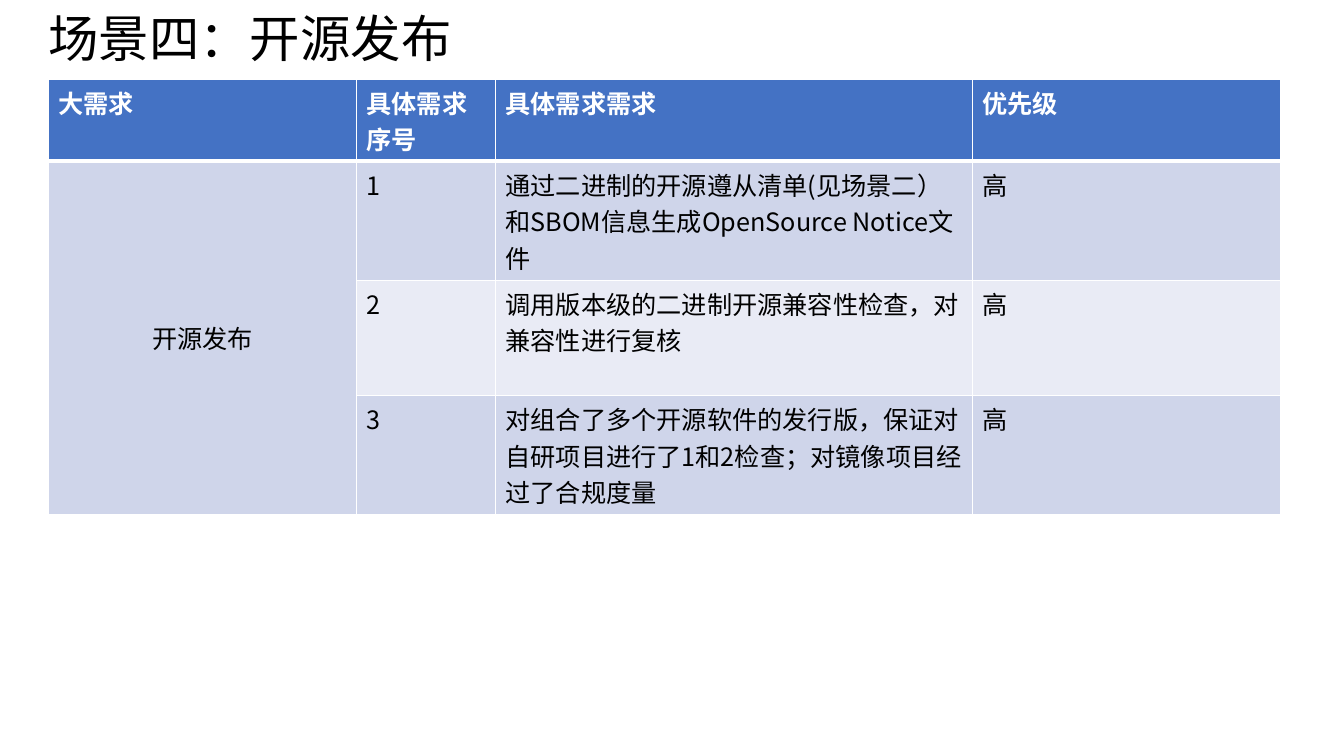
"""Builds a slide with a title and a table of open source release needs."""
from lxml import etree
from pptx import Presentation
from pptx import util as u
from pptx.dml.color import RGBColor
from pptx.enum import text as t
from pptx.oxml.ns import qn

FONT = "Noto Sans CJK SC"
BLACK = RGBColor(0, 0, 0)
WHITE = RGBColor(255, 255, 255)
BLUE = RGBColor(0x44, 0x72, 0xC4)
DARK = RGBColor(0xCF, 0xD5, 0xEA)
LIGHT = RGBColor(0xE9, 0xEB, 0xF5)

HEAD = ["大需求", "具体需求序号", "具体需求需求", "优先级"]
GROUP = "开源发布"
NEEDS = [
    "通过二进制的开源遵从清单(见场景二）和SBOM信息生成OpenSource Notice文件",
    "调用版本级的二进制开源兼容性检查，对兼容性进行复核",
    "对组合了多个开源软件的发行版，保证对自研项目进行了1和2检查；对镜像项目经过了合规度量",
]
LEVEL = "高"
WIDE = [3.06, 1.38, 4.74, 3.06]
TALL = [58.5, 85.2, 82.2, 85.2]


def style(frame, size, color, bold=False):
    """Format every run of a text frame."""
    for para in frame.paragraphs:
        for run in para.runs:
            font = run.font
            font.name, font.size, font.bold = FONT, u.Pt(size), bold
            font.color.rgb = color
            east = etree.Element(qn("a:ea"), typeface=FONT)
            font._element.find(qn("a:latin")).addnext(east)


def edge(cell, base):
    """Draw white cell borders, with the given width below."""
    props = cell._tc.get_or_add_tcPr()
    widths = {"lnL": 1, "lnR": 1, "lnT": 1, "lnB": base}
    for spot, (tag, width) in enumerate(widths.items()):
        line = etree.Element(qn("a:" + tag), w=str(u.Pt(width)))
        fill = etree.SubElement(line, qn("a:solidFill"))
        etree.SubElement(fill, qn("a:srgbClr"), val=str(WHITE))
        props.insert(spot, line)


def title(slide, left, top, width, height):
    """Add the slide title in the given box."""
    box = slide.shapes.add_textbox(*map(u.Pt, (left, top, width, height)))
    frame = box.text_frame
    frame.word_wrap = True
    frame.vertical_anchor = t.MSO_ANCHOR.MIDDLE
    frame.text = "场景四：开源发布"
    frame.paragraphs[0].line_spacing = 0.9
    style(frame, 36, BLACK)


def table(slide, left, top, width, height):
    """Add the table of needs in the given box."""
    rows = [HEAD]
    for num, need in enumerate(NEEDS, 1):
        rows.append([GROUP if num == 1 else "", str(num), need, LEVEL])
    area = map(u.Pt, (left, top, width, height))
    grid = slide.shapes.add_table(len(rows), len(HEAD), *area).table
    for col, share in zip(grid.columns, WIDE):
        col.width = u.Pt(width * share / sum(WIDE))
    for line, share in zip(grid.rows, TALL):
        line.height = u.Pt(height * share / sum(TALL))
    for r, row in enumerate(rows):
        for c, words in enumerate(row):
            cell = grid.cell(r, c)
            cell.text = words
            cell.fill.solid()
            cell.fill.fore_color.rgb = (BLUE, DARK, LIGHT)[2 - r % 2 if r else 0]
            edge(cell, 1 if r else 3)
            style(cell.text_frame, 18, BLACK if r else WHITE, r == 0)
    group = grid.cell(1, 0)
    group.merge(grid.cell(len(NEEDS), 0))
    group.vertical_anchor = t.MSO_ANCHOR.MIDDLE
    group.text_frame.paragraphs[0].alignment = t.PP_ALIGN.CENTER


def main():
    """Build and save the slide."""
    deck = Presentation()
    deck.slide_width, deck.slide_height = u.Pt(960), u.Pt(540)
    slide = deck.slides.add_slide(deck.slide_layouts[6])
    title(slide, 27.4, 2, 828, 55)
    table(slide, 34.6, 56.5, 880, sum(TALL))
    deck.save("out.pptx")


if __name__ == "__main__":
    main()
